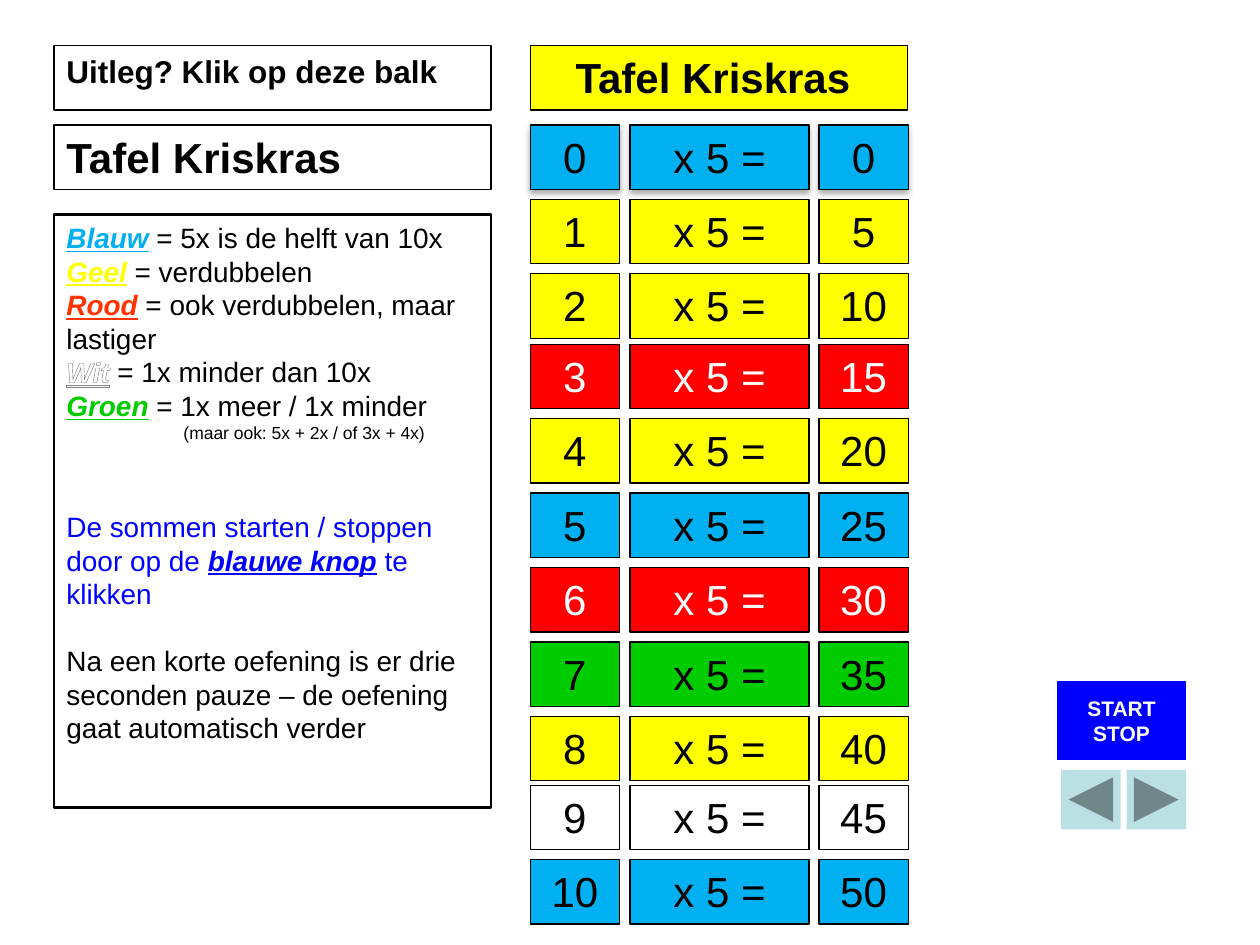
import dataclasses

import pptx
import pptx.dml.color
import pptx.enum.dml
import pptx.enum.shapes
import pptx.enum.text
import pptx.oxml
import pptx.oxml.ns
import pptx.util

Cm = pptx.util.Cm
Pt = pptx.util.Pt
SHAPES = pptx.enum.shapes.MSO_SHAPE
ALIGN = pptx.enum.text.PP_ALIGN
ANCHOR = pptx.enum.text.MSO_ANCHOR
NAMESPACE = pptx.oxml.ns.nsdecls("a")


@dataclasses.dataclass(frozen=True)
class Theme:
    font: str = "Arial"
    black: str = "000000"
    white: str = "FFFFFF"
    blue: str = "00B0F0"
    yellow: str = "FFFF00"
    red: str = "FF0000"
    orange: str = "FF3300"
    green: str = "00CC00"
    strong_blue: str = "0000FF"
    grey: str = "808080"
    pale_teal: str = "BBE0E3"
    title_size: float = 24
    bar_size: float = 18
    body_size: float = 16
    button_size: float = 12
    note_size: float = 10


THEME = Theme()


def rgb(color):
    return pptx.dml.color.RGBColor.from_string(color)


def add_box(slide, box, kind=SHAPES.RECTANGLE, fill=None, line_width=0.75):
    """Add a flat shape; box is left, top, width, height in cm."""
    shape = slide.shapes.add_shape(kind, *(Cm(length) for length in box))
    shape.shadow.inherit = False
    if fill:
        shape.fill.solid()
        shape.fill.fore_color.rgb = rgb(fill)
    else:
        shape.fill.background()
    if line_width:
        shape.line.color.rgb = rgb(THEME.black)
        shape.line.width = Pt(line_width)
    else:
        shape.line.fill.background()
    shape.text_frame.word_wrap = True
    shape.text_frame.vertical_anchor = ANCHOR.TOP
    return shape


def style_paragraph(paragraph, size, color=THEME.black, bold=False, align=ALIGN.LEFT):
    paragraph.alignment = align
    paragraph.font.name = THEME.font
    paragraph.font.size = Pt(size)
    paragraph.font.bold = bold
    paragraph.font.color.rgb = rgb(color)


def add_label(slide, box, text, size=THEME.title_size, color=THEME.black,
              bold=False, align=ALIGN.LEFT, **box_style):
    shape = add_box(slide, box, **box_style)
    shape.text_frame.text = text
    for paragraph in shape.text_frame.paragraphs:
        style_paragraph(paragraph, size, color, bold, align)
    return shape


def add_soft_shadow(shape):
    effects = shape._element.spPr.find(pptx.oxml.ns.qn("a:effectLst"))
    effects.append(pptx.oxml.parse_xml(
        f'<a:outerShdw {NAMESPACE} blurRad="44450" dist="27940" dir="5400000">'
        f'<a:srgbClr val="{THEME.black}"><a:alpha val="32000"/></a:srgbClr>'
        '</a:outerShdw>'))


def add_key_word(paragraph, text, color):
    run = paragraph.add_run()
    run.text = text
    run.font.bold = run.font.italic = run.font.underline = True
    run.font.color.rgb = rgb(color)
    return run


def outline_text(run):
    """Give white lettering a grey outline."""
    run.font.fill.patterned()
    run.font.fill.pattern = pptx.enum.dml.MSO_PATTERN.NARROW_HORIZONTAL
    run.font.fill.fore_color.rgb = rgb(THEME.white)
    run.font.fill.back_color.rgb = rgb(THEME.white)
    run._r.get_or_add_rPr().insert(0, pptx.oxml.parse_xml(
        f'<a:ln {NAMESPACE} w="12700"><a:solidFill>'
        f'<a:srgbClr val="{THEME.grey}"/></a:solidFill></a:ln>'))


def add_explanation(slide, box):
    frame = add_box(slide, box, fill=THEME.white, line_width=1.5).text_frame
    legend = [
        ("Blauw", THEME.blue, " = 5x is de helft van 10x"),
        ("Geel", THEME.yellow, " = verdubbelen"),
        ("Rood", THEME.orange, " = ook verdubbelen, maar lastiger"),
        ("Wit", THEME.white, " = 1x minder dan 10x"),
        ("Groen", THEME.green, " = 1x meer / 1x minder"),
    ]
    paragraph = frame.paragraphs[0]
    for word, color, meaning in legend:
        style_paragraph(paragraph, THEME.body_size)
        key_word = add_key_word(paragraph, word, color)
        if color == THEME.white:
            outline_text(key_word)
        paragraph.add_run().text = meaning
        paragraph = frame.add_paragraph()

    style_paragraph(paragraph, THEME.note_size)
    paragraph._p.get_or_add_pPr().set("marL", str(Cm(2.36)))
    paragraph.add_run().text = "(maar ook: 5x + 2x / of 3x + 4x)"

    paragraph = frame.add_paragraph()
    style_paragraph(paragraph, THEME.body_size, THEME.strong_blue)
    paragraph.space_before = Pt(38)
    paragraph.add_run().text = "De sommen starten / stoppen door op de "
    add_key_word(paragraph, "blauwe knop", THEME.strong_blue)
    paragraph.add_run().text = " te klikken"

    paragraph = frame.add_paragraph()
    style_paragraph(paragraph, THEME.body_size)
    paragraph.space_before = Pt(19)
    paragraph.add_run().text = ("Na een korte oefening is er drie seconden pauze "
                                "– de oefening gaat automatisch verder")


def add_instructions(slide, left, top):
    width, bar_height = 8.81, 1.3
    add_label(slide, (left, top, width, bar_height), "Uitleg? Klik op deze balk",
              size=THEME.bar_size, bold=True)
    add_label(slide, (left, top + 1.6, width, bar_height), "Tafel Kriskras", bold=True)
    add_explanation(slide, (left, top + 3.4, width, 11.96))


def add_times_table(slide, left, top, factor):
    row_height, pitch = 1.3, 1.5
    add_label(slide, (left, top, 7.6, row_height), "Tafel Kriskras ", bold=True,
              align=ALIGN.CENTER, fill=THEME.yellow)
    columns = [(0, 1.8), (2.01, 3.61), (5.82, 1.8)]
    row_groups = [
        (1.6, [THEME.blue, THEME.yellow, THEME.yellow]),
        (6.02, [THEME.red, THEME.yellow, THEME.blue, THEME.red, THEME.green, THEME.yellow]),
        (14.91, [THEME.white, THEME.blue]),
    ]
    rows = [(offset + index * pitch, fill)
            for offset, fills in row_groups for index, fill in enumerate(fills)]
    for number, (offset, fill) in enumerate(rows):
        color = THEME.white if fill == THEME.red else THEME.black
        texts = (str(number), f"x {factor} =", str(number * factor))
        for (shift, width), text in zip(columns, texts):
            cell = add_label(slide, (left + shift, top + offset, width, row_height), text,
                             color=color, align=ALIGN.CENTER, fill=fill)
            if number == 0:
                add_soft_shadow(cell)


def add_controls(slide, left, top):
    button = add_label(slide, (left, top, 2.6, 1.6), "START\nSTOP", size=THEME.button_size,
                       color=THEME.white, bold=True, align=ALIGN.CENTER,
                       kind=SHAPES.ACTION_BUTTON_CUSTOM, fill=THEME.strong_blue, line_width=0)
    button.text_frame.vertical_anchor = ANCHOR.MIDDLE
    button.text_frame.word_wrap = False
    arrows = [SHAPES.ACTION_BUTTON_BACK_OR_PREVIOUS, SHAPES.ACTION_BUTTON_FORWARD_OR_NEXT]
    for index, kind in enumerate(arrows):
        add_box(slide, (left + 0.08 + index * 1.32, top + 1.8, 1.2, 1.2), kind,
                THEME.pale_teal, line_width=0)


def main():
    presentation = pptx.Presentation()
    presentation.slide_width, presentation.slide_height = Cm(25.4), Cm(19.05)
    slide = presentation.slides.add_slide(presentation.slide_layouts[6])
    add_instructions(slide, 1.09, 0.92)
    add_times_table(slide, 10.69, 0.92, factor=5)
    add_controls(slide, 21.31, 13.72)
    presentation.save("out.pptx")


if __name__ == "__main__":
    main()
